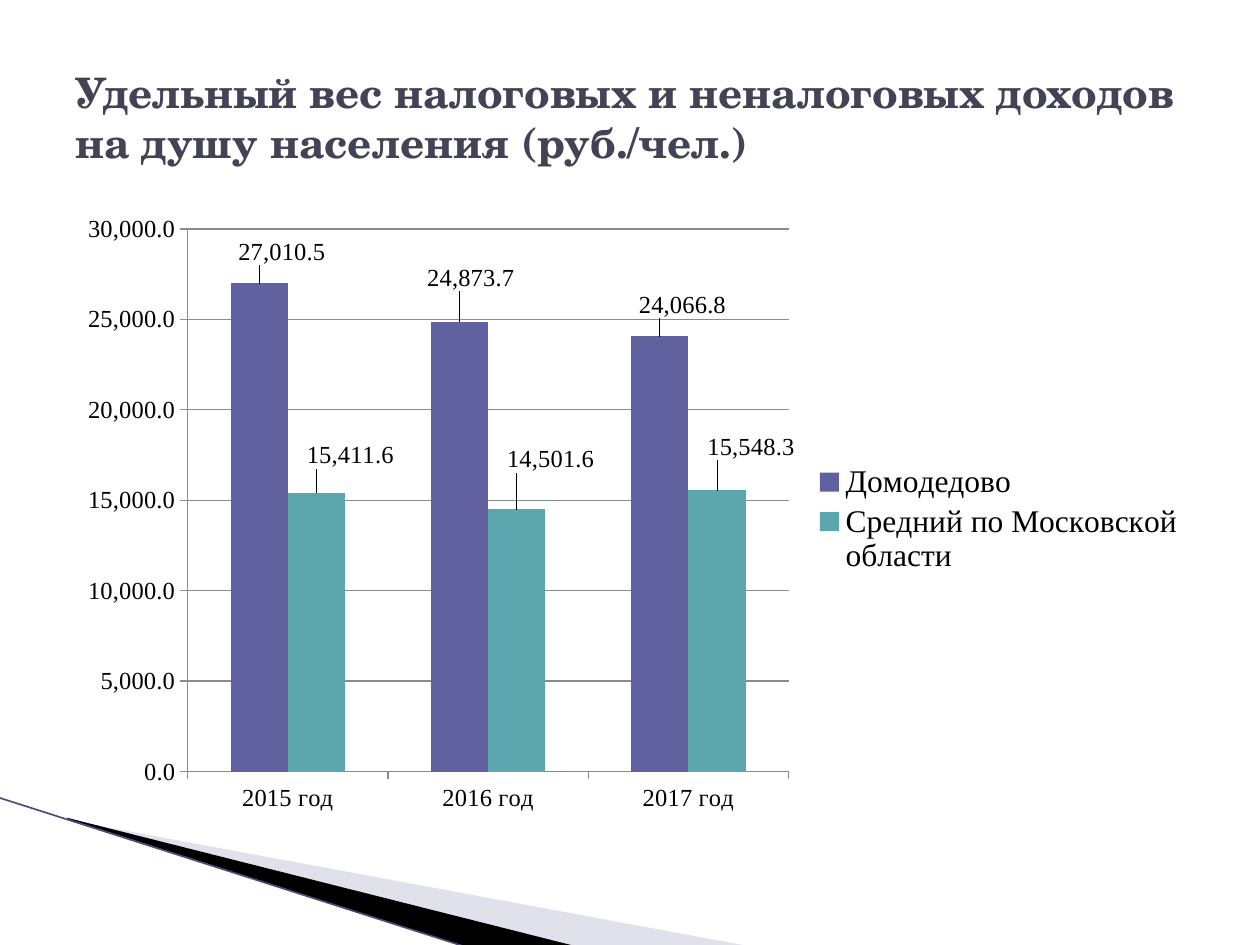
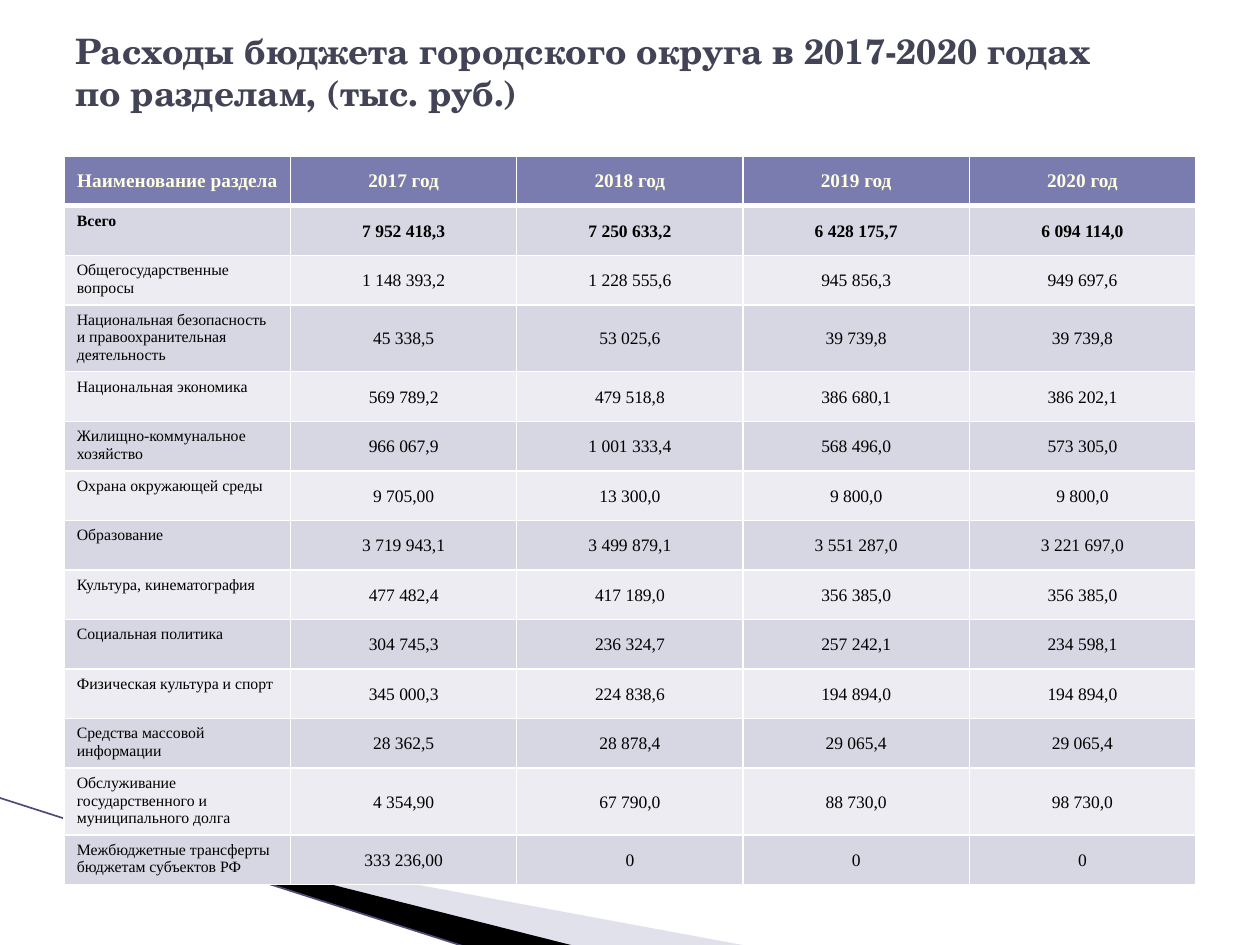
from lxml.etree import SubElement
from pptx import Presentation
from pptx.chart.data import CategoryChartData
from pptx.dml.color import RGBColor
from pptx.enum.chart import XL_CHART_TYPE as ChartType
from pptx.enum.chart import XL_LABEL_POSITION as LabelPosition
from pptx.enum.chart import XL_LEGEND_POSITION as LegendPosition
from pptx.enum.chart import XL_TICK_MARK as TickMark
from pptx.enum.shapes import MSO_CONNECTOR as Connector
from pptx.enum.text import MSO_ANCHOR as Anchor
from pptx.enum.text import PP_ALIGN as Align
from pptx.oxml import parse_xml
from pptx.oxml.ns import nsdecls, qn
from pptx.util import Inches, Pt

TITLE_FONT = "TeX Gyre Schola"
BODY_FONT = "Times New Roman"
TITLE_COLOR = "424456"
BLACK = "000000"
WHITE = "FFFFFF"
GRID_COLOR = "8B8B8B"
EDGE_COLOR = "4E4B7B"
WEDGE_COLOR = "B6B6D1"
HEADER_FILL = "7A7BAE"
HEADER_TEXT = "FFFFE1"
BAND_FILLS = ("D7D7E3", "ECECF2")

YEARS = ("2015 год", "2016 год", "2017 год")
# name, colour, values, label shifts as fractions of the chart size
INCOME = (
    ("Домодедово", "60619E", (27010.5, 24873.7, 24066.8),
     ((0.02, -0.02), (0.01, -0.04), (0.02, -0.02))),
    ("Средний по Московской области", "5BA7AD", (15411.6, 14501.6, 15548.3),
     ((0.03, -0.03), (0.03, -0.05), (0.03, -0.04))),
)

EXPENSE_HEADER = ("Наименование раздела", "2017 год", "2018 год", "2019 год", "2020 год")
EXPENSES = (
    ("Всего", "7 952 418,3", "7 250 633,2", "6 428 175,7", "6 094 114,0"),
    ("Общегосударственные вопросы", "1 148 393,2", "1 228 555,6", "945 856,3", "949 697,6"),
    ("Национальная безопасность и правоохранительная деятельность",
     "45 338,5", "53 025,6", "39 739,8", "39 739,8"),
    ("Национальная экономика", "569 789,2", "479 518,8", "386 680,1", "386 202,1"),
    ("Жилищно-коммунальное хозяйство", "966 067,9", "1 001 333,4", "568 496,0", "573 305,0"),
    ("Охрана окружающей среды", "9 705,00", "13 300,0", "9 800,0", "9 800,0"),
    ("Образование", "3 719 943,1", "3 499 879,1", "3 551 287,0", "3 221 697,0"),
    ("Культура, кинематография", "477 482,4", "417 189,0", "356 385,0", "356 385,0"),
    ("Социальная политика", "304 745,3", "236 324,7", "257 242,1", "234 598,1"),
    ("Физическая культура и спорт", "345 000,3", "224 838,6", "194 894,0", "194 894,0"),
    ("Средства массовой информации", "28 362,5", "28 878,4", "29 065,4", "29 065,4"),
    ("Обслуживание государственного и муниципального долга",
     "4 354,90", "67 790,0", "88 730,0", "98 730,0"),
    ("Межбюджетные трансферты бюджетам субъектов РФ", "333 236,00", "0", "0", "0"),
)
TALL_ROWS = (3, 12)


def rgb(color):
    return RGBColor.from_string(color)


def style_font(font, size, color=BLACK, name=BODY_FONT, bold=False):
    font.size, font.name, font.bold = Pt(size), name, bold
    font.color.rgb = rgb(color)


def add_wedge(slide, points, color, opacity=None):
    """Draw a filled outline; opacity is a percentage."""
    start, *rest = [(Inches(x), Inches(y)) for x, y in points]
    builder = slide.shapes.build_freeform(*start)
    builder.add_line_segments(rest, close=True)
    wedge = builder.convert_to_shape()
    wedge.shadow.inherit = False
    wedge.line.fill.background()
    wedge.fill.solid()
    wedge.fill.fore_color.rgb = rgb(color)
    if opacity:
        tint = wedge.fill._xPr.find(".//" + qn("a:srgbClr"))
        SubElement(tint, qn("a:alpha"), val=str(opacity * 1000))


def add_corner_decor(slide):
    add_wedge(slide, ((0.55, 6.51), (5.95, 7.51), (4.56, 7.51), (0.55, 6.5)), WEDGE_COLOR, 40)
    add_wedge(slide, ((0.53, 6.49), (4.57, 7.51), (3.72, 7.52), (0.54, 6.5)), BLACK)
    edge = slide.shapes.add_connector(
        Connector.STRAIGHT, Inches(-0.01), Inches(6.33), Inches(3.71), Inches(7.52))
    edge.line.color.rgb = rgb(EDGE_COLOR)
    edge.line.width = Pt(0.95)
    SubElement(edge._element.spPr, qn("a:effectLst"))


def add_title(slide, text, top, height, size):
    title = slide.shapes.add_textbox(Inches(0.5), Inches(top), Inches(9), Inches(height))
    frame = title.text_frame
    frame.word_wrap = True
    frame.vertical_anchor = Anchor.MIDDLE
    frame.text = text
    for run in frame.paragraphs[0].runs:
        style_font(run.font, size, TITLE_COLOR, TITLE_FONT, bold=True)


def place(element, index, x, y, w=None, h=None, inner=False, edge=True):
    """Give a chart part a manual layout, as fractions of the chart size."""
    for old in element.findall(qn("c:layout")):
        element.remove(old)
    settings = [("layoutTarget", "inner")] if inner else []
    if edge:
        settings += [("xMode", "edge"), ("yMode", "edge")]
    settings += [("x", x), ("y", y)]
    if w:
        settings += [("w", w), ("h", h)]
    tags = "".join(f'<c:{tag} val="{value}"/>' for tag, value in settings)
    element.insert(index, parse_xml(
        f'<c:layout {nsdecls("c")}><c:manualLayout>{tags}</c:manualLayout></c:layout>'))


def style_axis(axis):
    style_font(axis.tick_labels.font, 14)
    axis.major_tick_mark = TickMark.OUTSIDE
    axis.format.line.color.rgb = rgb(GRID_COLOR)


def style_series(series, color, label_shifts):
    series.format.fill.solid()
    series.format.fill.fore_color.rgb = rgb(color)
    series.invert_if_negative = False
    labels = series.data_labels
    labels.show_value = True
    labels.number_format, labels.number_format_is_linked = "#,##0.0", False
    style_font(labels.font, 14)
    for index in range(len(label_shifts)):
        label = series.points[index].data_label
        style_font(label.font, 14)
        label.position = LabelPosition.OUTSIDE_END
    for label, shift in zip(series._element.xpath("c:dLbls/c:dLbl"), label_shifts):
        place(label, 1, *shift, edge=False)


def add_income_chart(slide):
    income = CategoryChartData(number_format="#,##0.0")
    income.categories = YEARS
    for name, _, values, _ in INCOME:
        income.add_series(name, values)
    chart = slide.shapes.add_chart(
        ChartType.COLUMN_CLUSTERED, Inches(0.5), Inches(1.62), Inches(9), Inches(4.95),
        income).chart
    style_font(chart.font, 18)
    chart.has_title = False
    chart.has_legend = True
    chart.legend.position = LegendPosition.RIGHT
    chart.legend.include_in_layout = False
    style_font(chart.legend.font, 18)

    style_axis(chart.category_axis)
    style_axis(chart.value_axis)
    chart.value_axis.minimum_scale, chart.value_axis.maximum_scale = 0, 30000
    chart.value_axis.major_unit = 5000
    chart.value_axis.major_gridlines.format.line.color.rgb = rgb(GRID_COLOR)
    chart.value_axis.tick_labels.number_format = "#,##0.0"
    chart.value_axis.tick_labels.number_format_is_linked = False

    plot = chart.plots[0]
    plot.gap_width, plot.overlap, plot.vary_by_categories = 150, 0, False
    for series, (_, color, _, shifts) in zip(plot.series, INCOME):
        style_series(series, color, shifts)
    place(chart._chartSpace.chart.plotArea, 0, 0.11, 0.04, 0.53, 0.87, inner=True)
    place(chart.legend._element, 1, 0.66, 0.41, 0.33, 0.19)


def add_borders(cell, bottom_width):
    props = cell._tc.get_or_add_tcPr()
    widths = {"lnL": 1, "lnR": 1, "lnT": 1, "lnB": bottom_width}
    for index, (side, width) in enumerate(widths.items()):
        props.insert(index, parse_xml(
            f'<a:{side} {nsdecls("a")} w="{Pt(width)}"><a:solidFill>'
            f'<a:srgbClr val="{WHITE}"/></a:solidFill></a:{side}>'))


def fill_cell(cell, text, row, column):
    is_header, is_name = row == 0, column == 0
    cell.text = text
    paragraph = cell.text_frame.paragraphs[0]
    size = 11 if is_header else 9 if is_name else 10
    style_font(paragraph.runs[0].font, size, HEADER_TEXT if is_header else BLACK, bold=row < 2)
    if is_header or not is_name:
        paragraph.alignment = Align.CENTER
        cell.vertical_anchor = Anchor.MIDDLE
    if not is_header and not is_name:
        cell.margin_left = cell.margin_right = cell.margin_top = Inches(0.01)
        cell.margin_bottom = 0
    cell.fill.solid()
    cell.fill.fore_color.rgb = rgb(HEADER_FILL if is_header else BAND_FILLS[(row - 1) % 2])
    add_borders(cell, 3 if is_header else 1)


def add_expense_table(slide):
    rows = (EXPENSE_HEADER,) + EXPENSES
    width, height, tall = 8.98, 5.78, 0.53
    table = slide.shapes.add_table(
        len(rows), len(EXPENSE_HEADER), Inches(0.51), Inches(1.24),
        Inches(width), Inches(height)).table
    table.horz_banding = False
    regular = (height - tall * len(TALL_ROWS)) / (len(rows) - len(TALL_ROWS))
    for row, texts in enumerate(rows):
        table.rows[row].height = Inches(tall if row in TALL_ROWS else regular)
        for column, text in enumerate(texts):
            fill_cell(table.cell(row, column), text, row, column)


def add_slide(deck):
    slide = deck.slides.add_slide(deck.slide_layouts[6])
    add_corner_decor(slide)
    return slide


def main():
    deck = Presentation()
    deck.slide_width, deck.slide_height = Inches(10), Inches(7.5)

    income_slide = add_slide(deck)
    add_income_chart(income_slide)
    add_title(income_slide,
              "Удельный вес налоговых и неналоговых доходов на душу населения (руб./чел.)",
              0.3, 1.25, 24)

    expense_slide = add_slide(deck)
    add_expense_table(expense_slide)
    add_title(expense_slide,
              "Расходы бюджета городского округа в 2017-2020 годах\vпо разделам, (тыс. руб.)",
              0.13, 0.87, 20)

    deck.save("out.pptx")


if __name__ == "__main__":
    main()
